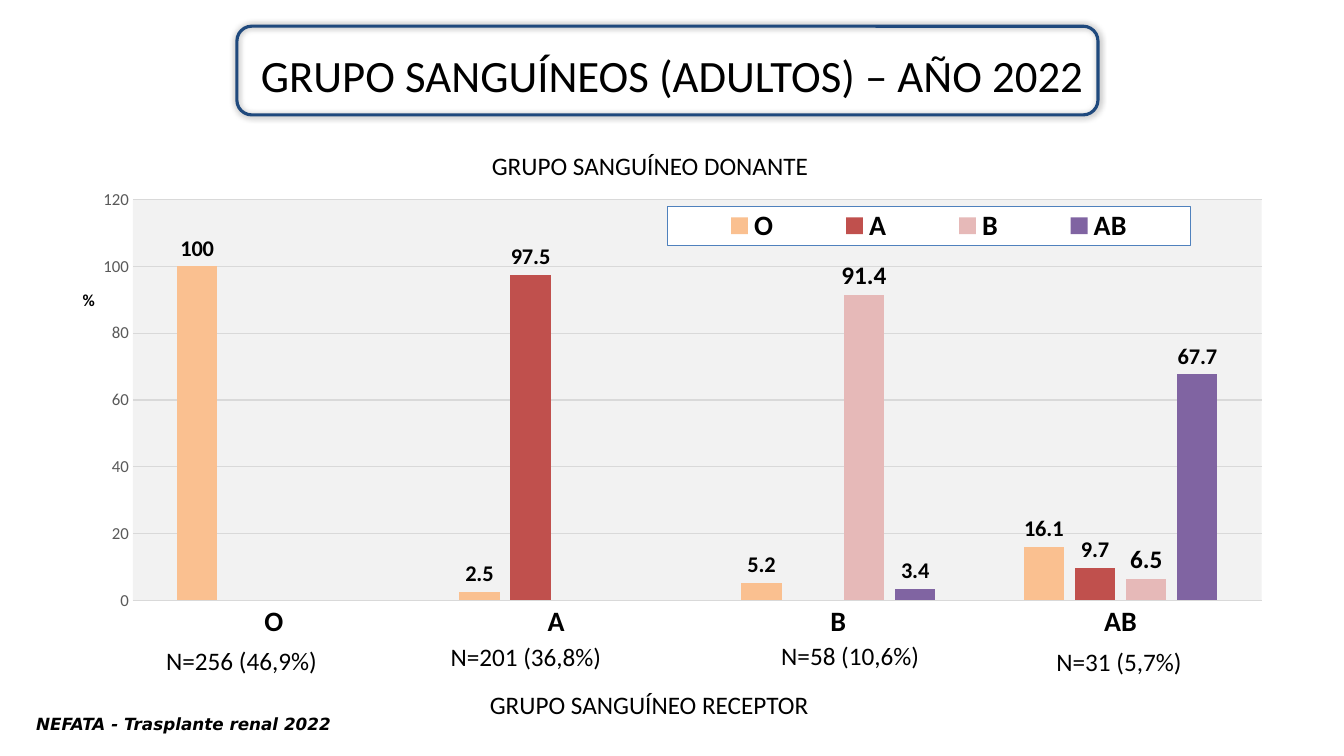
from dataclasses import dataclass

from lxml.etree import SubElement
from pptx import Presentation
from pptx.chart.data import CategoryChartData
from pptx.dml.color import RGBColor
from pptx.enum.chart import XL_CHART_TYPE, XL_LABEL_POSITION, XL_LEGEND_POSITION, XL_TICK_MARK
from pptx.enum.shapes import MSO_SHAPE
from pptx.enum.text import MSO_ANCHOR, PP_ALIGN
from pptx.oxml import parse_xml
from pptx.oxml.ns import nsdecls, qn
from pptx.util import Inches, Pt


@dataclass(frozen=True)
class Theme:
    font: str = "Calibri"
    footer_font: str = "DejaVu Sans"
    ink: str = "000000"
    muted: str = "595959"
    grid: str = "D9D9D9"
    plot: str = "F2F2F2"
    frame: str = "1F497D"
    legend_frame: str = "4F81BD"
    title_size: int = 32
    group_size: int = 20
    caption_size: int = 18
    label_size: int = 16
    small_size: int = 12
    base_size: int = 10


BLOOD_GROUPS = ("O", "A", "B", "AB")
# donor group: shares by recipient group, colour, label size
DONORS = {
    "O": ((100, 2.5, 5.2, 16.1), "FAC090", Theme.label_size),
    "A": ((None, 97.5, None, 9.7), "C0504D", Theme.label_size),
    "B": ((None, None, 91.4, 6.5), "E6B9B8", Theme.caption_size),
    "AB": ((None, None, 3.4, 67.7), "8064A2", Theme.label_size),
}
CAPTIONS = (
    ("N=256 (46,9%)", 1.55, 6.35, 1.71),
    ("N=201 (36,8%)", 4.37, 6.31, 1.71),
    ("N=58 (10,6%)", 7.65, 6.3, 1.59),
    ("N=31 (5,7%)", 10.38, 6.36, 1.46),
    ("GRUPO SANGUÍNEO RECEPTOR", 4.76, 6.79, 3.39),
    ("GRUPO SANGUÍNEO DONANTE", 4.78, 1.44, 3.37),
)


def place(part, x, y, width=None, height=None, inner=False):
    """Give a chart part a manual layout, in fractions of the chart."""
    layout = part.find(qn("c:layout"))
    if layout is None:
        layout = parse_xml(f"<c:layout {nsdecls('c')}/>")
        part.insert(0, layout)
    manual = SubElement(layout, qn("c:manualLayout"))
    settings = [("layoutTarget", "inner")] if inner else []
    settings += [("xMode", "edge"), ("yMode", "edge"), ("x", x), ("y", y)]
    if width:
        settings += [("w", width), ("h", height)]
    for tag, value in settings:
        SubElement(manual, qn(f"c:{tag}")).set("val", str(value))


def chart_fill(fill, line=None):
    outline = (f'<a:ln w="9525"><a:solidFill><a:srgbClr val="{line}"/></a:solidFill></a:ln>'
               if line else "<a:ln><a:noFill/></a:ln>")
    return parse_xml(f'<c:spPr {nsdecls("c", "a")}><a:solidFill><a:srgbClr val="{fill}"/>'
                     f"</a:solidFill>{outline}</c:spPr>")


class BloodGroupSlide:
    def __init__(self, slide, theme):
        self.slide = slide
        self.theme = theme

    def style(self, font, size, color=None, bold=False, italic=False, name=None):
        font.name = name or self.theme.font
        font.size = Pt(size)
        font.bold = bold
        font.italic = italic
        font.color.rgb = RGBColor.from_string(color or self.theme.ink)

    def text(self, words, left, top, width, height, size, wrap=False,
             align=PP_ALIGN.LEFT, **look):
        box = self.slide.shapes.add_textbox(
            Inches(left), Inches(top), Inches(width), Inches(height))
        frame = box.text_frame
        frame.word_wrap = wrap
        frame.vertical_anchor = MSO_ANCHOR.MIDDLE
        frame.text = words
        frame.paragraphs[0].alignment = align
        self.style(frame.paragraphs[0].runs[0].font, size, **look)

    def frame(self, left, top, width, height):
        """Draw the unfilled rounded outline with its soft shadow."""
        outline = self.slide.shapes.add_shape(
            MSO_SHAPE.ROUNDED_RECTANGLE,
            Inches(left), Inches(top), Inches(width), Inches(height))
        outline.fill.background()
        outline.line.color.rgb = RGBColor.from_string(self.theme.frame)
        outline.line.width = Pt(2.25)
        outline.shadow.inherit = False
        effects = outline._element.spPr.find(qn("a:effectLst"))
        effects.append(parse_xml(
            f'<a:outerShdw {nsdecls("a")} blurRad="{Pt(5)}" dist="0" dir="0" algn="ctr" '
            f'rotWithShape="0"><a:srgbClr val="{self.theme.ink}"><a:alpha val="40000"/>'
            "</a:srgbClr></a:outerShdw>"))

    def chart(self, left, top, width, height):
        data = CategoryChartData()
        data.categories = BLOOD_GROUPS
        for donor, (shares, _, _) in DONORS.items():
            data.add_series(donor, shares)
        chart = self.slide.shapes.add_chart(
            XL_CHART_TYPE.COLUMN_CLUSTERED, Inches(left), Inches(top),
            Inches(width), Inches(height), data).chart
        chart.has_title = False
        self.style(chart.font, self.theme.base_size)
        self.columns(chart.plots[0])
        self.axes(chart)
        self.legend(chart)
        plot_area = chart._chartSpace.chart.plotArea
        place(plot_area, 0.054, 0.035, 0.933, 0.813, inner=True)
        plot_area.append(chart_fill(self.theme.plot))

    def columns(self, plot):
        plot.gap_width = 219
        plot.overlap = -27
        plot.vary_by_categories = False
        for series, (_, color, size) in zip(plot.series, DONORS.values()):
            series.format.fill.solid()
            series.format.fill.fore_color.rgb = RGBColor.from_string(color)
            series.invert_if_negative = False
            labels = series.data_labels
            labels.show_value = True
            labels.position = XL_LABEL_POSITION.OUTSIDE_END
            self.style(labels.font, size, bold=True)

    def axes(self, chart):
        groups, percent = chart.category_axis, chart.value_axis
        grid = RGBColor.from_string(self.theme.grid)
        for axis in (groups, percent):
            axis.major_tick_mark = axis.minor_tick_mark = XL_TICK_MARK.NONE
        self.style(groups.tick_labels.font, self.theme.group_size, bold=True)
        self.style(percent.tick_labels.font, self.theme.small_size, self.theme.muted)
        for line in (groups.format.line, percent.major_gridlines.format.line):
            line.color.rgb = grid
            line.width = Pt(0.75)
        percent.format.line.fill.background()
        percent.minimum_scale, percent.maximum_scale, percent.major_unit = 0, 120, 20
        title = percent.axis_title
        title.text_frame.text = "%"
        self.style(title.text_frame.paragraphs[0].runs[0].font,
                   self.theme.small_size, bold=True)
        body = title._element.find(".//" + qn("a:bodyPr"))
        body.set("rot", "0")
        body.set("vert", "horz")
        place(title._element, 0.01, 0.21)

    def legend(self, chart):
        chart.has_legend = True
        legend = chart.legend
        legend.position = XL_LEGEND_POSITION.BOTTOM
        legend.include_in_layout = False
        self.style(legend.font, self.theme.group_size, bold=True)
        place(legend._element, 0.496, 0.048, 0.432, 0.08)
        text_style = legend._element.find(qn("c:txPr"))
        text_style.addprevious(chart_fill("FFFFFF", self.theme.legend_frame))


def main():
    deck = Presentation()
    deck.slide_width, deck.slide_height = Inches(13.33), Inches(7.5)
    theme = Theme()
    page = BloodGroupSlide(deck.slides.add_slide(deck.slide_layouts[6]), theme)
    page.text("GRUPO SANGUÍNEOS (ADULTOS) – AÑO 2022", 0.67, 0.3, 12, 0.88,
              theme.title_size, wrap=True, align=PP_ALIGN.CENTER)
    page.chart(0.67, 1.81, 12, 4.89)
    for words, left, top, width in CAPTIONS:
        page.text(words, left, top, width, 0.4, theme.caption_size)
    page.text("NEFATA - Trasplante renal 2022", 0.26, 7.03, 3.55, 0.3, theme.small_size,
              wrap=True, bold=True, italic=True, name=theme.footer_font)
    page.frame(2.35, 0.26, 8.54, 0.88)
    deck.save("out.pptx")


if __name__ == "__main__":
    main()
